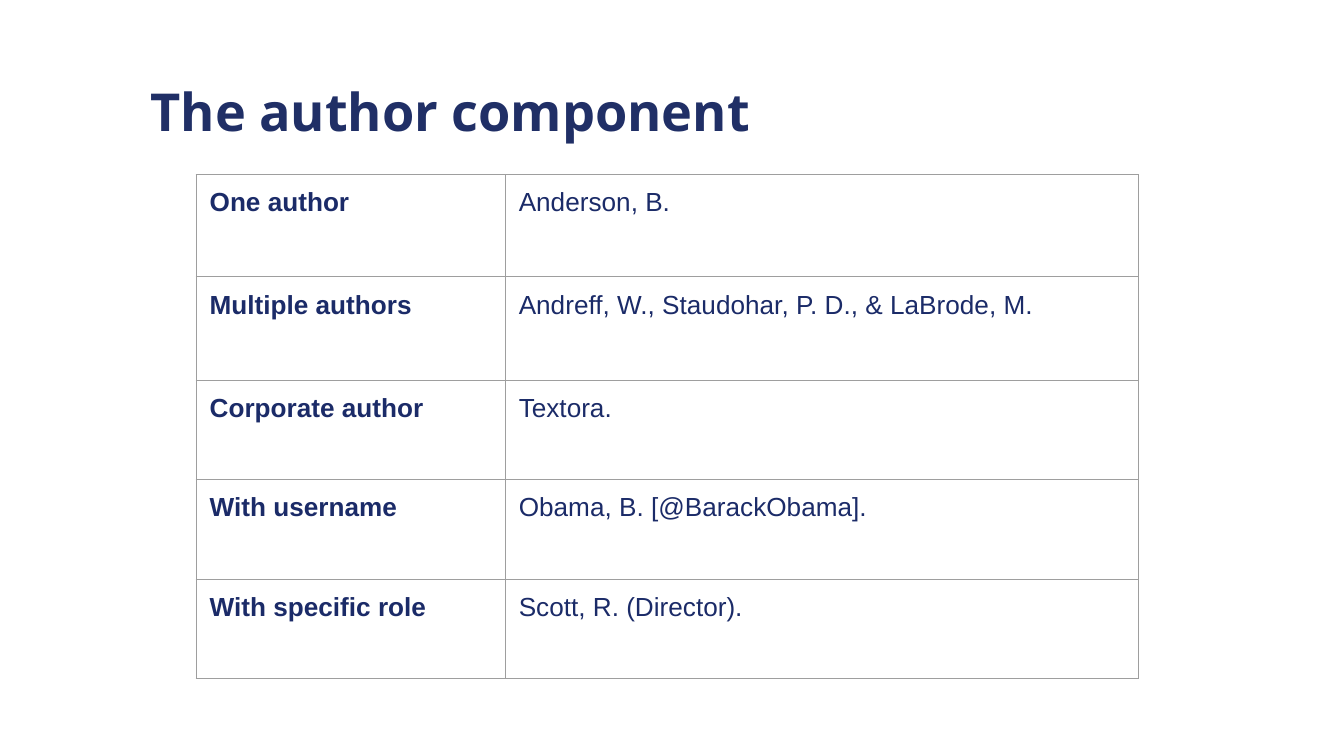
from pptx import Presentation
from pptx.dml.color import RGBColor
from pptx.enum.text import MSO_ANCHOR, MSO_AUTO_SIZE, PP_ALIGN
from pptx.oxml import parse_xml
from pptx.oxml.ns import nsdecls
from pptx.util import Inches, Pt

COLORS = {"title": "202F66", "text": "1B2B68", "border": "9E9E9E"}
MARGIN = Inches(0.1)


def write(frame, text, font="Arial", size=14, color="text", bold=False):
    frame.word_wrap = True
    paragraph = frame.paragraphs[0]
    paragraph.alignment = PP_ALIGN.LEFT
    run = paragraph.add_run()
    run.text = text
    run.font.name = font
    run.font.size = Pt(size)
    run.font.bold = bold
    run.font.color.rgb = RGBColor.from_string(COLORS[color])


def format_cell(cell):
    cell.margin_left = cell.margin_right = MARGIN
    cell.margin_top = cell.margin_bottom = MARGIN
    cell.vertical_anchor = MSO_ANCHOR.TOP
    properties = cell._tc.get_or_add_tcPr()
    for side in ("lnL", "lnR", "lnT", "lnB"):
        properties.append(parse_xml(
            f'<a:{side} {nsdecls("a")} w="{Pt(0.75)}"><a:solidFill>'
            f'<a:srgbClr val="{COLORS["border"]}"/></a:solidFill></a:{side}>'
        ))
    cell.fill.background()


prs = Presentation()
prs.slide_width = Inches(10)
prs.slide_height = Inches(10 * 9 / 16)
slide = prs.slides.add_slide(prs.slide_layouts[5])

heading = slide.shapes.title
heading.left, heading.top = Inches(1.02), Inches(0.49)
heading.width, heading.height = Inches(7.87), Inches(0.63)
heading_frame = heading.text_frame
heading_frame.auto_size = MSO_AUTO_SIZE.NONE
heading_frame.vertical_anchor = MSO_ANCHOR.TOP
heading_frame.margin_left = heading_frame.margin_right = MARGIN
heading_frame.margin_top = heading_frame.margin_bottom = MARGIN
write(heading_frame, "The author component", font="Open Sans", size=28,
      color="title", bold=True)

examples = [
    ("One author", "Anderson, B.", 0.76),
    ("Multiple authors", "Andreff, W., Staudohar, P. D., & LaBrode, M.", 0.77),
    ("Corporate author", "Textora.", 0.74),
    ("With username", "Obama, B. [@BarackObama].", 0.74),
    ("With specific role", "Scott, R. (Director).", 0.74),
]
column_widths = [2.3, 4.71]
authors = slide.shapes.add_table(
    len(examples), len(column_widths), Inches(1.46), Inches(1.3),
    Inches(sum(column_widths)), Inches(sum(row[2] for row in examples)),
).table
authors.first_row = False
authors.horz_banding = False
for column, width in zip(authors.columns, column_widths):
    column.width = Inches(width)

for row_index, (author_type, citation, height) in enumerate(examples):
    authors.rows[row_index].height = Inches(height)
    for column_index, text in enumerate((author_type, citation)):
        cell = authors.cell(row_index, column_index)
        format_cell(cell)
        write(cell.text_frame, text, bold=column_index == 0)

prs.save("out.pptx")
